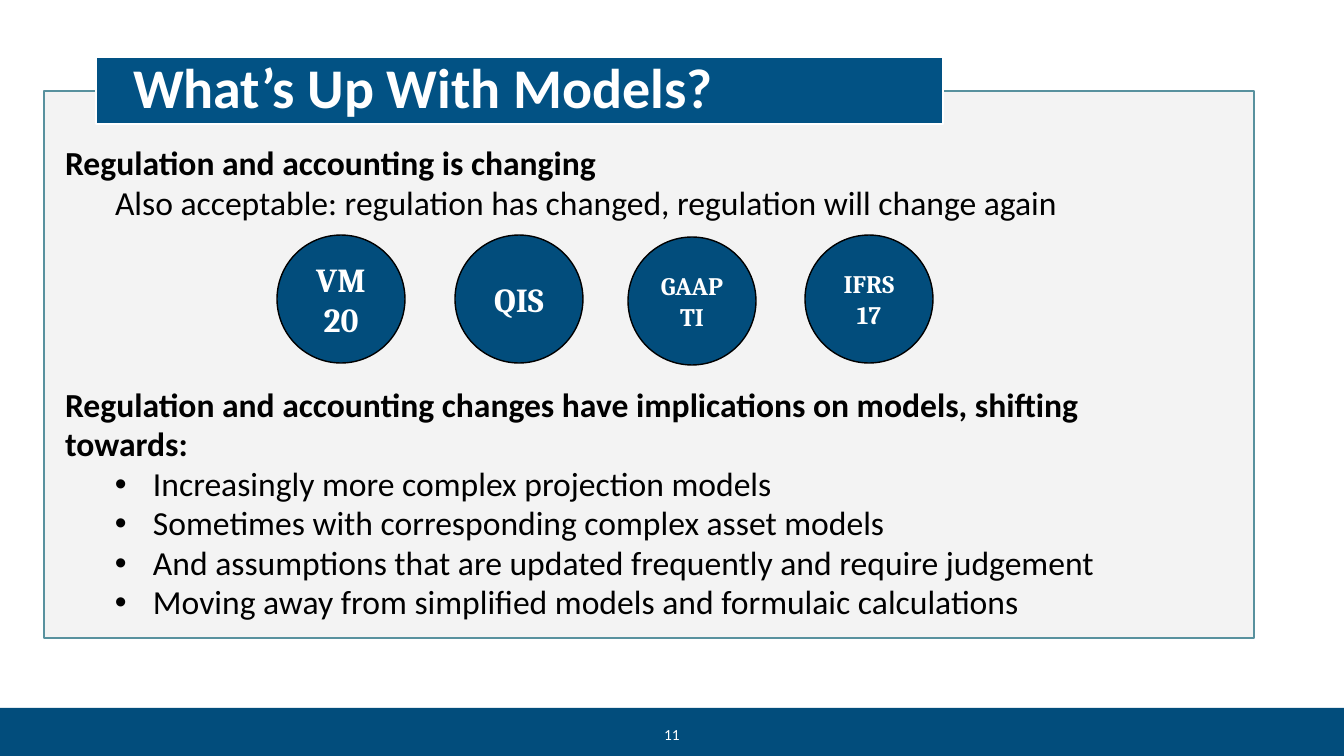
from lxml import etree
from pptx import Presentation
from pptx import util as u
from pptx.dml.color import RGBColor
from pptx.enum import shapes, text
from pptx.oxml.ns import qn

SCALE = 914400 / 100.8
HEX = {"navy": "024D7C", "blue": "025284", "teal": "58919E",
       "grey": "F2F2F2", "white": "FFFFFF", "black": "000000"}
KIND = shapes.MSO_SHAPE


def px(n):
    return u.Emu(round(n * SCALE))


def draw(kind, box, fill=None, line=None):
    if kind is None:
        item = deck.shapes.add_textbox(*map(px, box))
    else:
        item = deck.shapes.add_shape(kind, *map(px, box))
        item.shadow.inherit = False
        item.fill.solid()
        item.fill.fore_color.rgb = RGBColor.from_string(HEX[fill])
        if line:
            item.line.color.rgb = RGBColor.from_string(HEX[line])
            item.line.width = u.Pt(1)
        else:
            item.line.fill.background()
    item.text_frame.word_wrap = True
    return item


def style(para, size, color, bold=False, face="Calibri"):
    font = para.font
    font.size, font.bold, font.name = u.Pt(size), bold, face
    font.color.rgb = RGBColor.from_string(HEX[color])


show = Presentation()
show.slide_width, show.slide_height = px(1344), px(756)
deck = show.slides.add_slide(show.slide_layouts[6])

draw(KIND.RECTANGLE, (0, 708, 1344, 51), "navy")
page = draw(None, (636, 723, 72, 22)).text_frame
page.vertical_anchor = text.MSO_ANCHOR.MIDDLE
page.text = "11"
page.paragraphs[0].alignment = text.PP_ALIGN.CENTER
style(page.paragraphs[0], 11, "white")

panel = draw(KIND.RECTANGLE, (44, 91, 1210, 547), "grey", "teal")
tint = panel.fill._xPr.find(qn("a:solidFill"))[0]
etree.SubElement(tint, qn("a:alpha")).set("val", "90000")

body = draw(None, (-35, 108, 1301, 512)).text_frame
body.margin_left = body.margin_right = px(100)
body.margin_top, body.margin_bottom = px(36), px(16)
rows = [
    ("head", "Regulation and accounting is changing"),
    ("note", "Also acceptable: regulation has changed, regulation will change again"),
    ("head", "Regulation and accounting changes have implications on models, shifting towards:"),
    ("item", "Increasingly more complex projection models"),
    ("item", "Sometimes with corresponding complex asset models"),
    ("item", "And assumptions that are updated frequently and require judgement"),
    ("item", "Moving away from simplified models and formulaic calculations"),
]
dents = {"head": (0, 0), "note": (50, 0), "item": (88, -38)}
body.text = "\n".join(words for role, words in rows)
for para, (role, words) in zip(body.paragraphs, rows):
    left, first = dents[role]
    para.line_spacing = 0.98
    para.level = 0 if role == "head" else 1
    prop = para._p.get_or_add_pPr()
    prop.set("marL", str(px(left)))
    prop.set("indent", str(px(first)))
    if role == "item":
        etree.SubElement(prop, qn("a:buFont")).set("typeface", "Arial")
        etree.SubElement(prop, qn("a:buChar")).set("char", "•")
    else:
        etree.SubElement(prop, qn("a:buNone"))
    style(para, 24, "black", role == "head")
body.paragraphs[2].space_before = u.Pt(116)

draw(KIND.RECTANGLE, (96, 57, 847, 67), "blue", "white")
title = draw(None, (99, 60, 842, 60)).text_frame
title.margin_left = title.margin_right = px(34)
title.margin_top = title.margin_bottom = 0
title.vertical_anchor = text.MSO_ANCHOR.MIDDLE
title.text = "What’s Up With Models?"
title.paragraphs[0].line_spacing = 0.9
style(title.paragraphs[0], 40, "white", True)

rules = [(277, 235, "VM\n20", 24), (455, 235, "QIS", 24),
         (628, 237, "GAAP TI", 18), (805, 235, "IFRS\n17", 18)]
for left, top, words, size in rules:
    disc = draw(KIND.OVAL, (left, top, 128, 128), "navy", "black").text_frame
    disc.vertical_anchor = text.MSO_ANCHOR.MIDDLE
    disc.text = words
    for para in disc.paragraphs:
        para.alignment = text.PP_ALIGN.CENTER
        style(para, size, "white", True, "Cambria")

show.save("out.pptx")
